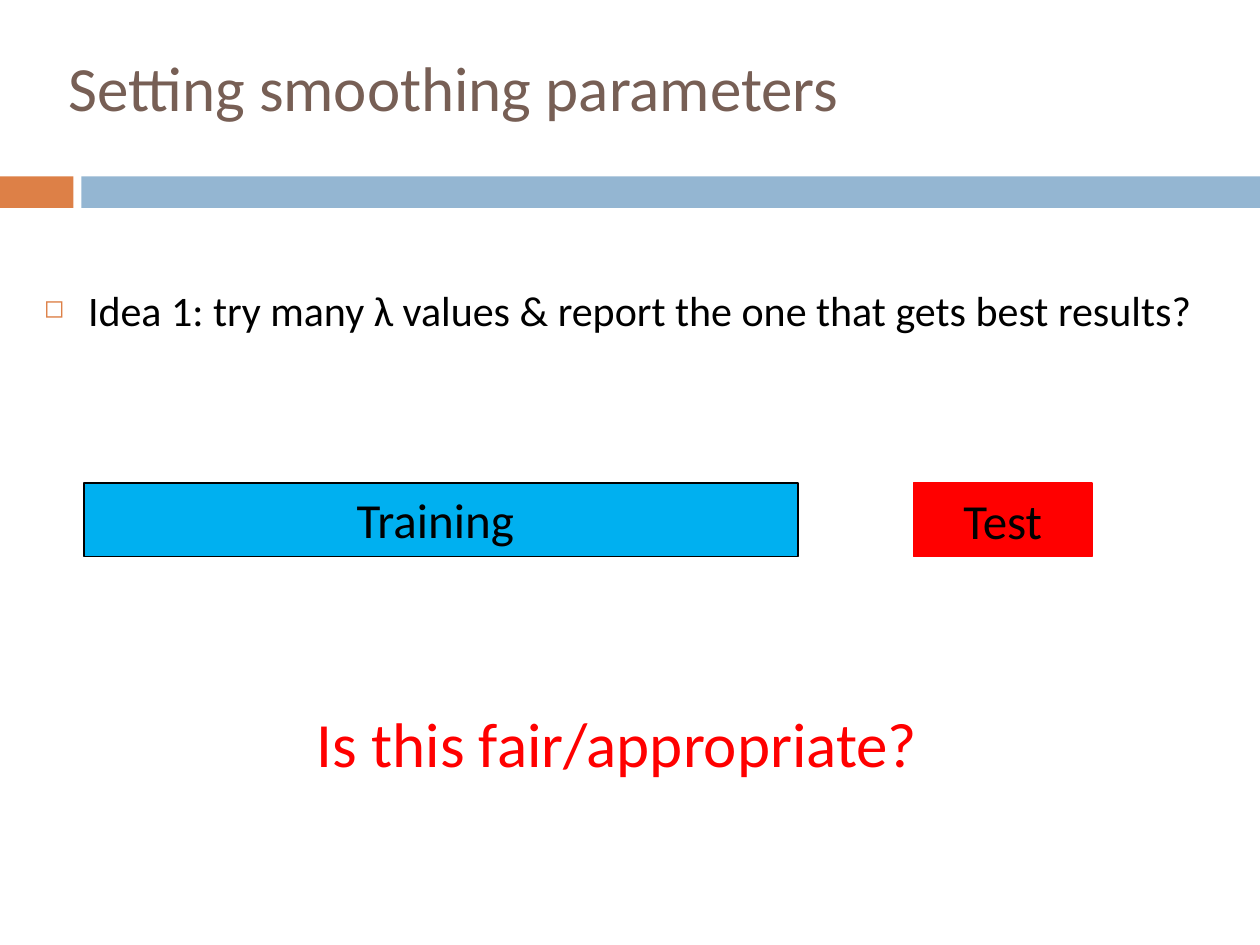
"""Build the slide on setting smoothing parameters."""
from lxml.etree import SubElement
from pptx import Presentation
from pptx.dml.color import RGBColor
from pptx.enum.shapes import MSO_SHAPE as SHAPE
from pptx.enum.text import MSO_ANCHOR as ANCHOR, PP_ALIGN as ALIGN
from pptx.oxml.ns import qn
from pptx.util import Pt


def rgb(value):
    return RGBColor.from_string(value)


def set_text(sp, text, size, color, anchor=ANCHOR.TOP, wrap=True):
    tf = sp.text_frame
    tf.word_wrap = wrap
    tf.vertical_anchor = anchor
    p = tf.paragraphs[0]
    p.text = text
    p.font.name = "Calibri"
    p.font.size = Pt(size)
    p.font.color.rgb = rgb(color)
    return p


prs = Presentation()
prs.slide_width, prs.slide_height = Pt(720), Pt(540)
s = prs.slides.add_slide(prs.slide_layouts[6])

for x, y, w, h, fill, line, label in [
    (0, 100.8, 42, 18, "DD8047", None, None),
    (46.5, 100.8, 673.5, 18, "94B6D2", None, None),
    (522, 276, 102, 42, "FF0000", "FF0000", "Test"),
    (48, 276, 408, 42, "00B0F0", "000000", None),
]:
    sp = s.shapes.add_shape(SHAPE.RECTANGLE, Pt(x), Pt(y), Pt(w), Pt(h))
    sp.shadow.inherit = False
    sp.fill.solid()
    sp.fill.fore_color.rgb = rgb(fill)
    if line:
        sp.line.color.rgb = rgb(line)
        sp.line.width = Pt(1)
    else:
        sp.line.fill.background()
    if label:
        p = set_text(sp, label, 28, "000000", ANCHOR.MIDDLE)
        p.alignment = ALIGN.CENTER

title = s.shapes.add_textbox(Pt(32), Pt(4.5), Pt(676), Pt(90))
set_text(title, "Setting smoothing parameters", 36, "775F55", ANCHOR.MIDDLE)

training = s.shapes.add_textbox(Pt(196.7), Pt(276.3), Pt(115), Pt(41))
set_text(training, "Training", 28, "000000", wrap=False)

question = s.shapes.add_textbox(Pt(174), Pt(399), Pt(372), Pt(51))
set_text(question, "Is this fair/appropriate?", 36, "FF0000")

idea = s.shapes.add_textbox(Pt(18), Pt(162.4), Pt(696), Pt(114))
p = set_text(idea, "Idea 1: try many λ values & report the one that gets best results?", 24, "000000")
p.line_spacing = 0.9
p.space_before = Pt(7)
pPr = p._p.get_or_add_pPr()
pPr.set("marL", str(Pt(25.2)))
pPr.set("indent", str(-Pt(25.2)))
for tag, attrs in [
    ("a:buClr", {}),
    ("a:buSzPct", {"val": "60000"}),
    ("a:buChar", {"char": "◻"}),
]:
    el = pPr.makeelement(qn(tag), attrs)
    pPr.insert_element_before(el, "a:tabLst", "a:defRPr", "a:extLst")
    if tag == "a:buClr":
        SubElement(el, qn("a:srgbClr"), val="DD8047")

prs.save("out.pptx")
